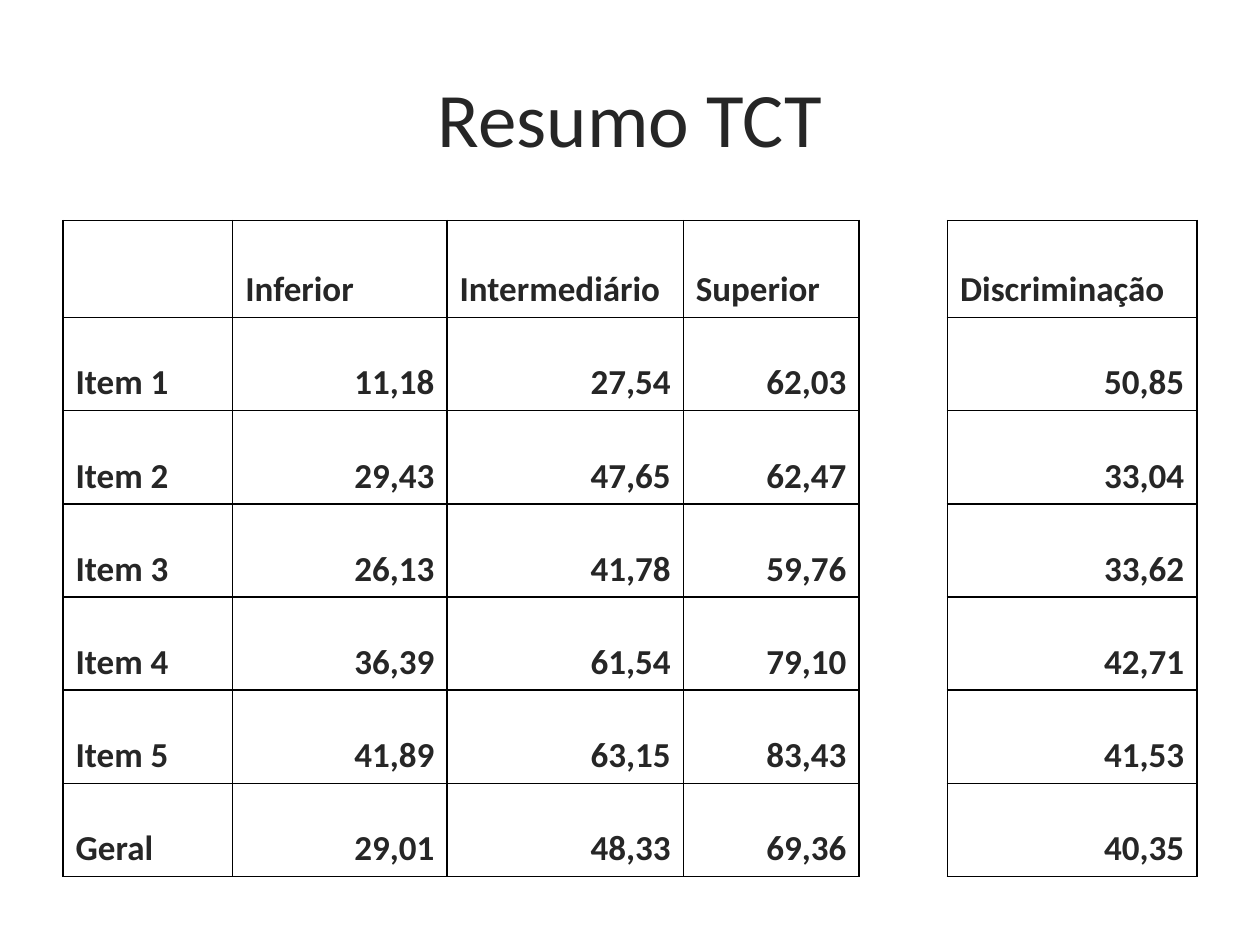
from pptx import Presentation
from pptx.dml.color import RGBColor
from pptx.enum.text import MSO_ANCHOR, PP_ALIGN
from pptx.oxml.ns import qn
from pptx.util import Pt
from lxml import etree

MIDDLE, BOTTOM = MSO_ANCHOR.MIDDLE, MSO_ANCHOR.BOTTOM
LEFT, CENTER, RIGHT = PP_ALIGN.LEFT, PP_ALIGN.CENTER, PP_ALIGN.RIGHT

FONT = "Calibri"
INK = "262626"
BORDER = "000000"
HANGING = Pt(27)
COLUMN_SHARES = [97, 122.5, 135, 100.5, 50.5, 142.5]
ROW_SHARES = [55.5] + [53.25] * 6
GAP_COLUMN = 4
RESULTS = [
    ["", "Inferior", "Intermediário", "Superior", "", "Discriminação"],
    ["Item 1", "11,18", "27,54", "62,03", "", "50,85"],
    ["Item 2", "29,43", "47,65", "62,47", "", "33,04"],
    ["Item 3", "26,13", "41,78", "59,76", "", "33,62"],
    ["Item 4", "36,39", "61,54", "79,10", "", "42,71"],
    ["Item 5", "41,89", "63,15", "83,43", "", "41,53"],
    ["Geral", "29,01", "48,33", "69,36", "", "40,35"],
]


def color(value):
    """Return the colour for a hex string."""
    return RGBColor.from_string(value)


def style_paragraph(paragraph, size, align, bold=False):
    """Set the alignment and font of a paragraph."""
    paragraph.alignment = align
    font = paragraph.font
    font.name, font.size, font.bold = FONT, Pt(size), bold
    font.color.rgb = color(INK)


def set_borders(cell, drawn_sides):
    """Draw the named sides of a cell and clear the others."""
    properties = cell._tc.get_or_add_tcPr()
    for side in "LRTB":
        line = etree.SubElement(properties, qn(f"a:ln{side}"), w=str(Pt(1)))
        if side in drawn_sides:
            fill = etree.SubElement(line, qn("a:solidFill"))
            etree.SubElement(fill, qn("a:srgbClr"), val=BORDER)
        else:
            etree.SubElement(line, qn("a:noFill"))


def add_title(slide, left, top, width, height):
    """Place the centred slide title in its box."""
    title = slide.shapes.add_textbox(Pt(left), Pt(top), Pt(width), Pt(height))
    frame = title.text_frame
    frame.word_wrap = True
    frame.vertical_anchor = MIDDLE
    heading = frame.paragraphs[0]
    heading.text = "Resumo TCT"
    style_paragraph(heading, 44, CENTER)


def fill_cell(cell, text, align):
    """Write one result with a hanging indent at the foot of its cell."""
    cell.vertical_anchor = BOTTOM
    paragraph = cell.text_frame.paragraphs[0]
    paragraph.text = text
    indents = paragraph._p.get_or_add_pPr()
    indents.set("marL", str(HANGING))
    indents.set("indent", str(-HANGING))
    style_paragraph(paragraph, 20, align, bold=True)


def add_results(slide, left, top, width, height):
    """Place the results table, with an open column before the last one."""
    table = slide.shapes.add_table(
        len(ROW_SHARES), len(COLUMN_SHARES), Pt(left), Pt(top), Pt(width), Pt(height)
    ).table
    table.first_row = table.horz_banding = False
    for column, share in zip(table.columns, COLUMN_SHARES):
        column.width = Pt(width * share / sum(COLUMN_SHARES))
    for row, share in zip(table.rows, ROW_SHARES):
        row.height = Pt(height * share / sum(ROW_SHARES))
    for r, results in enumerate(RESULTS):
        for c, text in enumerate(results):
            cell = table.cell(r, c)
            set_borders(cell, "LR" if c == GAP_COLUMN else "LRTB")
            cell.fill.background()
            if text:
                fill_cell(cell, text, RIGHT if r and c else LEFT)


def main():
    """Build and save the slide."""
    deck = Presentation()
    deck.slide_width, deck.slide_height = Pt(720), Pt(540)
    slide = deck.slides.add_slide(deck.slide_layouts[6])
    add_title(slide, 36, 21.6, 648, 90)
    add_results(slide, 36, 126, 648, 375)
    deck.save("out.pptx")


if __name__ == "__main__":
    main()
